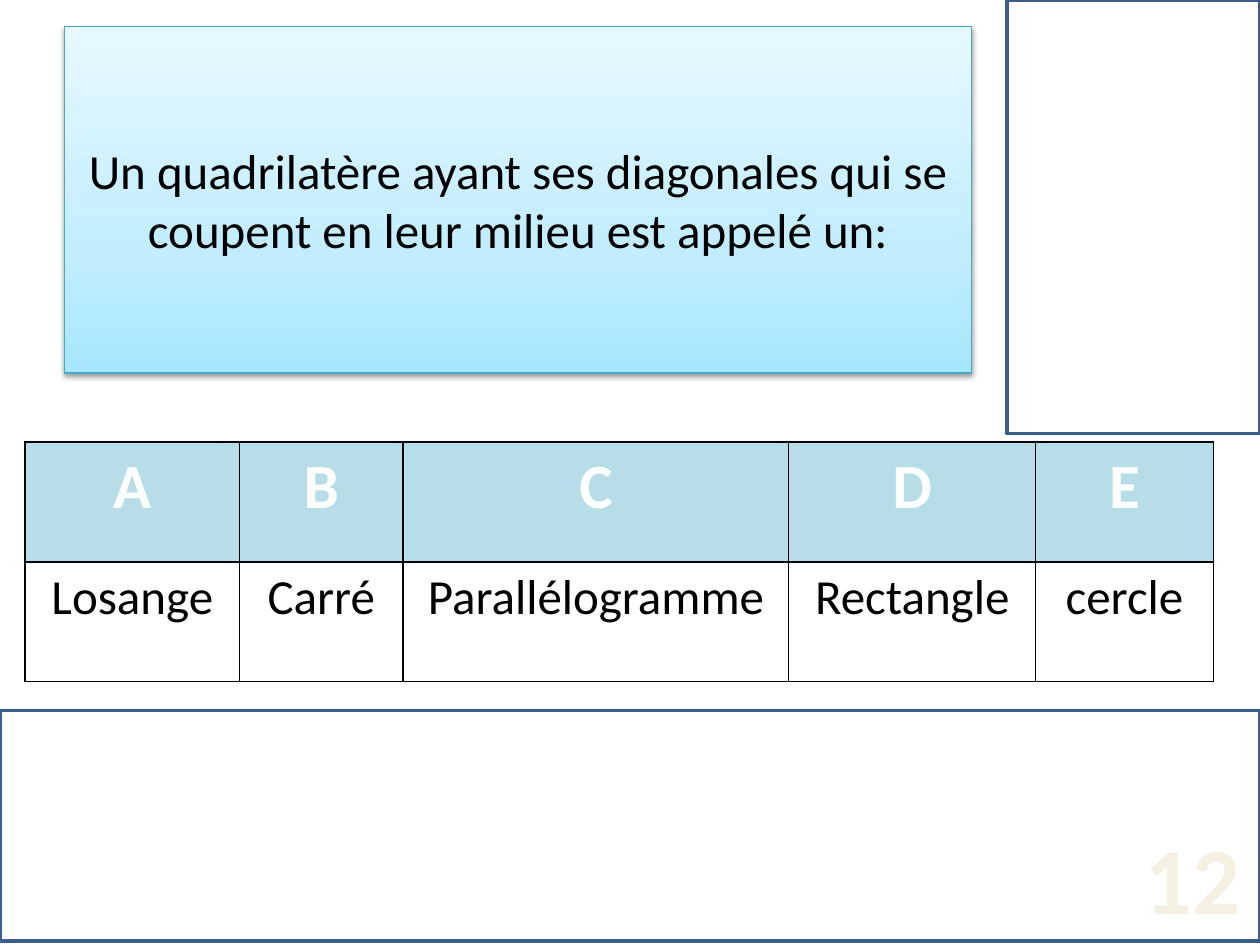
from lxml.etree import SubElement
from pptx import Presentation
from pptx.dml.color import RGBColor
from pptx.enum.shapes import MSO_SHAPE
from pptx.enum.text import MSO_ANCHOR, MSO_AUTO_SIZE, PP_ALIGN
from pptx.oxml import parse_xml
from pptx.oxml.ns import nsdecls, qn
from pptx.util import Inches, Pt

theme = {
    "font": "Calibri",
    "ink": "000000", "head": "FFFFFF", "band": "B7DEE8",
    "edge": "46AAC5", "frame": "3A5F8C", "pale": "F4F1E3",
    "fade": [(0, "A7E6FF"), (35, "C1EDFF"), (100, "E7F8FF")],
    "text": 28, "letter": 36, "number": 54,
}


def style(frame, size, color, bold=False):
    for para in frame.paragraphs:
        para.alignment = PP_ALIGN.CENTER
        for run in para.runs:
            run.font.name = theme["font"]
            run.font.size = Pt(size)
            run.font.bold = bold
            run.font.color.rgb = RGBColor.from_string(color)


def place(shape, left, top, width, height):
    shape.left, shape.top = Inches(left), Inches(top)
    shape.width, shape.height = Inches(width), Inches(height)


deck = Presentation()
wide, high = 10, 7.5
deck.slide_width, deck.slide_height = Inches(wide), Inches(high)
slide = deck.slides.add_slide(deck.slide_layouts[5])

title = slide.shapes.title
place(title, 0.51, 0.21, 7.2, 2.75)
title.text_frame.text = "Un quadrilatère ayant ses diagonales qui se coupent en leur milieu est appelé un:"
title.text_frame.vertical_anchor = MSO_ANCHOR.MIDDLE
style(title.text_frame, theme["text"], theme["ink"])
stops = "".join(
    f'<a:gs pos="{spot * 1000}"><a:srgbClr val="{color}"/></a:gs>'
    for spot, color in theme["fade"]
)
props = title._element.spPr
props.append(parse_xml(
    f'<a:gradFill {nsdecls("a")} rotWithShape="1"><a:gsLst>{stops}</a:gsLst>'
    '<a:lin ang="16200000" scaled="1"/></a:gradFill>'
))
title.line.color.rgb = RGBColor.from_string(theme["edge"])
title.line.width = Pt(0.75)
props.append(parse_xml(
    f'<a:effectLst {nsdecls("a")}>'
    '<a:outerShdw blurRad="40000" dist="20000" dir="5400000" rotWithShape="0">'
    f'<a:srgbClr val="{theme["ink"]}"><a:alpha val="38000"/></a:srgbClr>'
    '</a:outerShdw></a:effectLst>'
))

choices = ["Losange", "Carré", "Parallélogramme", "Rectangle", "cercle"]
widths = [1.7, 1.3, 3.06, 1.96, 1.41]
rows = [("ABCDE", theme["letter"], theme["head"], True),
        (choices, theme["text"], theme["ink"], False)]
tall = 0.95
grid = slide.shapes.add_table(
    len(rows), len(widths), Inches(0.2), Inches(3.51),
    Inches(sum(widths)), Inches(tall * len(rows)),
).table
grid.first_row = grid.horz_banding = False
for col, width in zip(grid.columns, widths):
    col.width = Inches(width)
for row, (words, size, color, top) in zip(grid.rows, rows):
    row.height = Inches(tall)
    for cell, word in zip(row.cells, words):
        cell.text_frame.text = word
        style(cell.text_frame, size, color, top)
        box = cell._tc.get_or_add_tcPr()
        for side in ("a:lnL", "a:lnR", "a:lnT", "a:lnB"):
            line = SubElement(box, qn(side), w=str(Pt(1)))
            SubElement(SubElement(line, qn("a:solidFill")), qn("a:srgbClr"), val=theme["ink"])
        if top:
            cell.fill.solid()
            cell.fill.fore_color.rgb = RGBColor.from_string(theme["band"])
        else:
            cell.fill.background()

number = slide.shapes.add_textbox(0, 0, 0, 0)
place(number, 8.98, 6.46, 0.97, 1.01)
number.text_frame.word_wrap = False
number.text_frame.auto_size = MSO_AUTO_SIZE.SHAPE_TO_FIT_TEXT
number.text_frame.text = "12"
style(number.text_frame, theme["number"], theme["pale"], True)

for area in [(7.99, 0, 2.01, 3.44), (0, 5.64, wide, 1.83)]:
    panel = slide.shapes.add_shape(MSO_SHAPE.RECTANGLE, 0, 0, 0, 0)
    place(panel, *area)
    panel.shadow.inherit = False
    panel.fill.background()
    panel.line.color.rgb = RGBColor.from_string(theme["frame"])
    panel.line.width = Pt(2)

deck.save("out.pptx")
